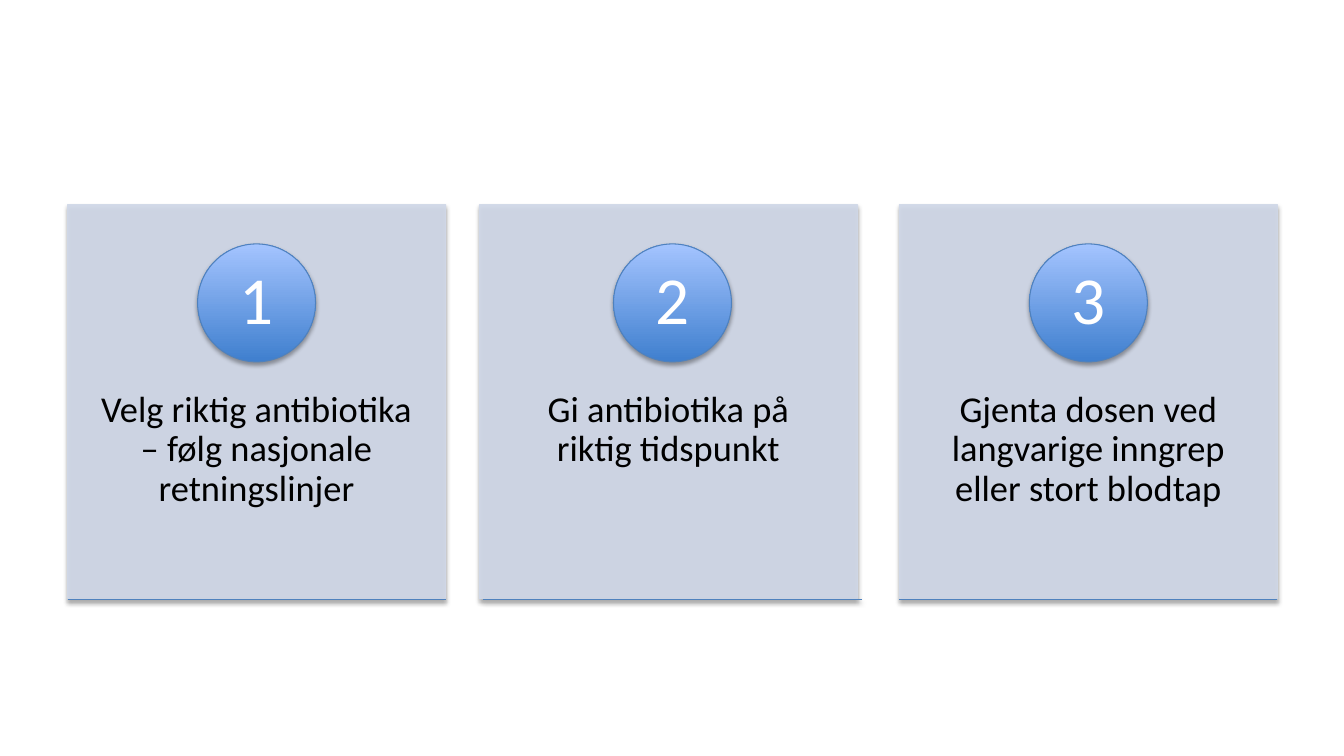
import pptx
import pptx.util
import pptx.dml.color
import pptx.enum.shapes
import pptx.enum.text
import pptx.oxml
import pptx.oxml.ns
from lxml import etree

Inches, Pt = pptx.util.Inches, pptx.util.Pt
RGBColor = pptx.dml.color.RGBColor
SHAPE = pptx.enum.shapes.MSO_SHAPE
ANCHOR = pptx.enum.text.MSO_ANCHOR
qn = pptx.oxml.ns.qn

STEPS = [
    ("1", "Velg riktig antibiotika – følg nasjonale retningslinjer", 0),
    ("2", "Gi antibiotika på riktig tidspunkt", -0.04),
    ("3", "Gjenta dosen ved langvarige inngrep eller stort blodtap", 0),
]

FONT = "Calibri"
PANEL = RGBColor(0xD0, 0xD8, 0xE8)
BLUE_DARK = RGBColor(0x3F, 0x7F, 0xCE)
BLUE_LIGHT = RGBColor(0xA4, 0xC4, 0xFF)
BLUE_LINE = RGBColor(0x4F, 0x81, 0xBD)
BLACK = RGBColor(0, 0, 0)
WHITE = RGBColor(0xFF, 0xFF, 0xFF)

LEFT, PITCH, WIDTH = 0.67, 4.125, 3.75
PANEL_TOP, PANEL_HEIGHT = 2.03, 3.91
TEXT_TOP, TEXT_HEIGHT = 3.52, 2.35
CIRCLE_TOP, CIRCLE = 2.42, 1.17
RULE_TOP = 5.95

SHADOW = (
    '<a:effectLst xmlns:a="http://schemas.openxmlformats.org/drawingml/2006/main">'
    '<a:outerShdw blurRad="40000" dist="23000" dir="5400000" rotWithShape="0">'
    '<a:srgbClr val="000000"><a:alpha val="35000"/></a:srgbClr>'
    '</a:outerShdw></a:effectLst>'
)


def add_shadow(sp):
    sp._element.spPr.append(pptx.oxml.parse_xml(SHADOW))


def set_line(sp, color):
    sp.line.color.rgb = color
    sp.line.width = Pt(0.75)


def write(tf, text, size, color, inset_x, inset_y, anchor):
    tf.word_wrap = True
    tf.vertical_anchor = anchor
    tf.margin_left = tf.margin_right = Inches(inset_x)
    tf.margin_top = tf.margin_bottom = Inches(inset_y)
    p = tf.paragraphs[0]
    p.alignment = pptx.enum.text.PP_ALIGN.CENTER
    p.line_spacing = 0.9
    r = p.add_run()
    r.text = text
    r.font.name = FONT
    r.font.size = Pt(size)
    r.font.color.rgb = color


def add_panel(s, x):
    sp = s.shapes.add_shape(SHAPE.RECTANGLE, Inches(x), Inches(PANEL_TOP),
                            Inches(WIDTH), Inches(PANEL_HEIGHT))
    sp.fill.solid()
    sp.fill.fore_color.rgb = PANEL
    set_line(sp, PANEL)
    for color in sp._element.spPr.iter(qn("a:srgbClr")):
        etree.SubElement(color, qn("a:alpha")).set("val", "90000")
    add_shadow(sp)


def add_circle(s, x, number):
    sp = s.shapes.add_shape(SHAPE.OVAL, Inches(x), Inches(CIRCLE_TOP),
                            Inches(CIRCLE), Inches(CIRCLE))
    sp.fill.gradient()
    sp.fill.gradient_angle = 90
    for stop, color, position in zip(sp.fill.gradient_stops, (BLUE_DARK, BLUE_LIGHT), (0, 1)):
        stop.color.rgb = color
        stop.position = position
    set_line(sp, BLUE_LINE)
    add_shadow(sp)
    write(sp.text_frame, number, 48, WHITE, 0.09, 0.01, ANCHOR.MIDDLE)


def add_rule(s, x):
    line = s.shapes.add_connector(pptx.enum.shapes.MSO_CONNECTOR.STRAIGHT,
                                  Inches(x), Inches(RULE_TOP),
                                  Inches(x + WIDTH), Inches(RULE_TOP))
    set_line(line, BLUE_LINE)
    add_shadow(line)


def main():
    prs = pptx.Presentation()
    prs.slide_width, prs.slide_height = Inches(13.33), Inches(7.5)
    s = prs.slides.add_slide(prs.slide_layouts[6])
    for i, (number, text, nudge) in enumerate(STEPS):
        x = LEFT + i * PITCH
        add_panel(s, x + nudge)
        tb = s.shapes.add_textbox(Inches(x + nudge), Inches(TEXT_TOP),
                                  Inches(WIDTH), Inches(TEXT_HEIGHT))
        write(tb.text_frame, text, 26, BLACK, 0.29, 0.36, ANCHOR.TOP)
        add_circle(s, x + (WIDTH - CIRCLE) / 2, number)
        add_rule(s, x)
    prs.save("out.pptx")


if __name__ == "__main__":
    main()
